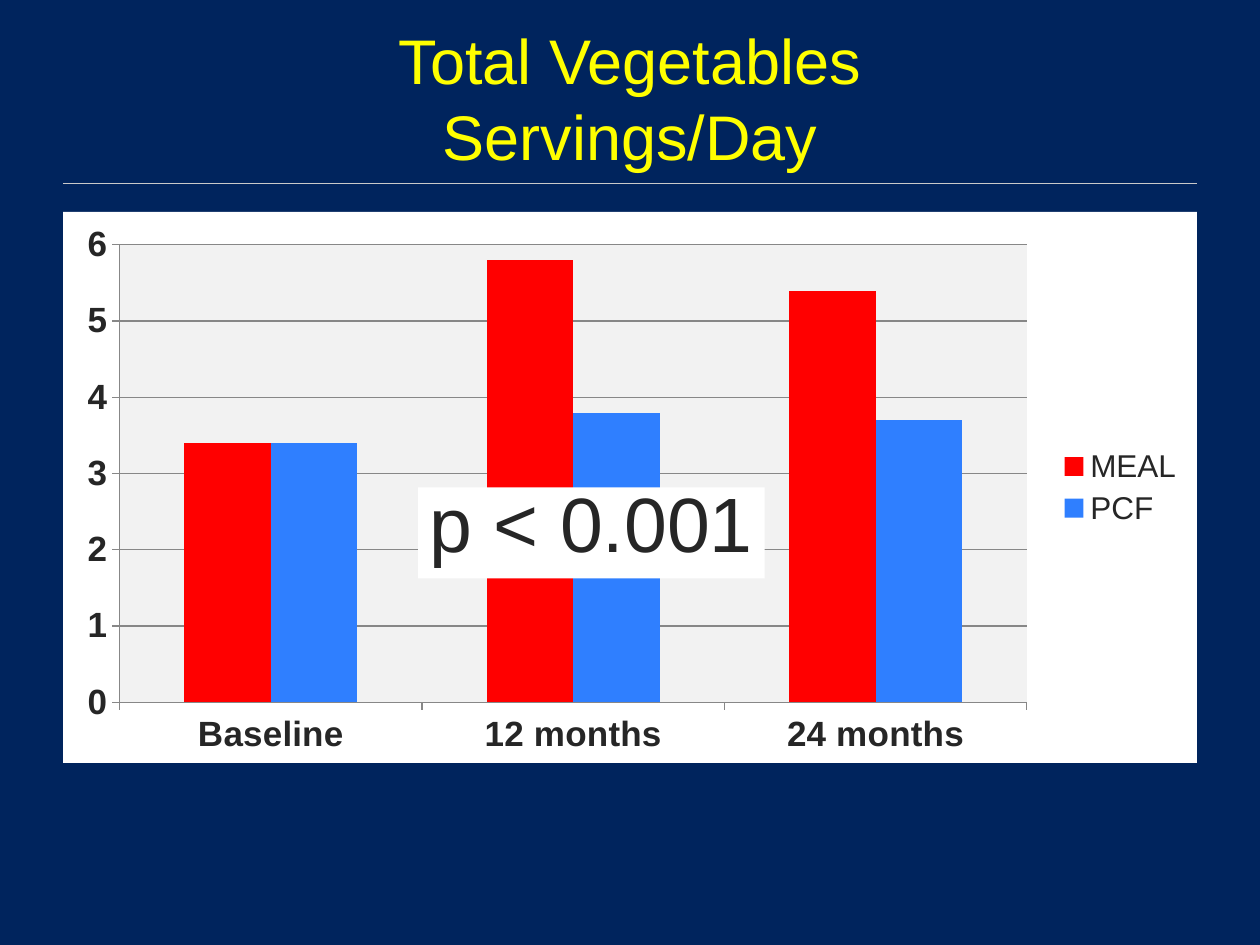
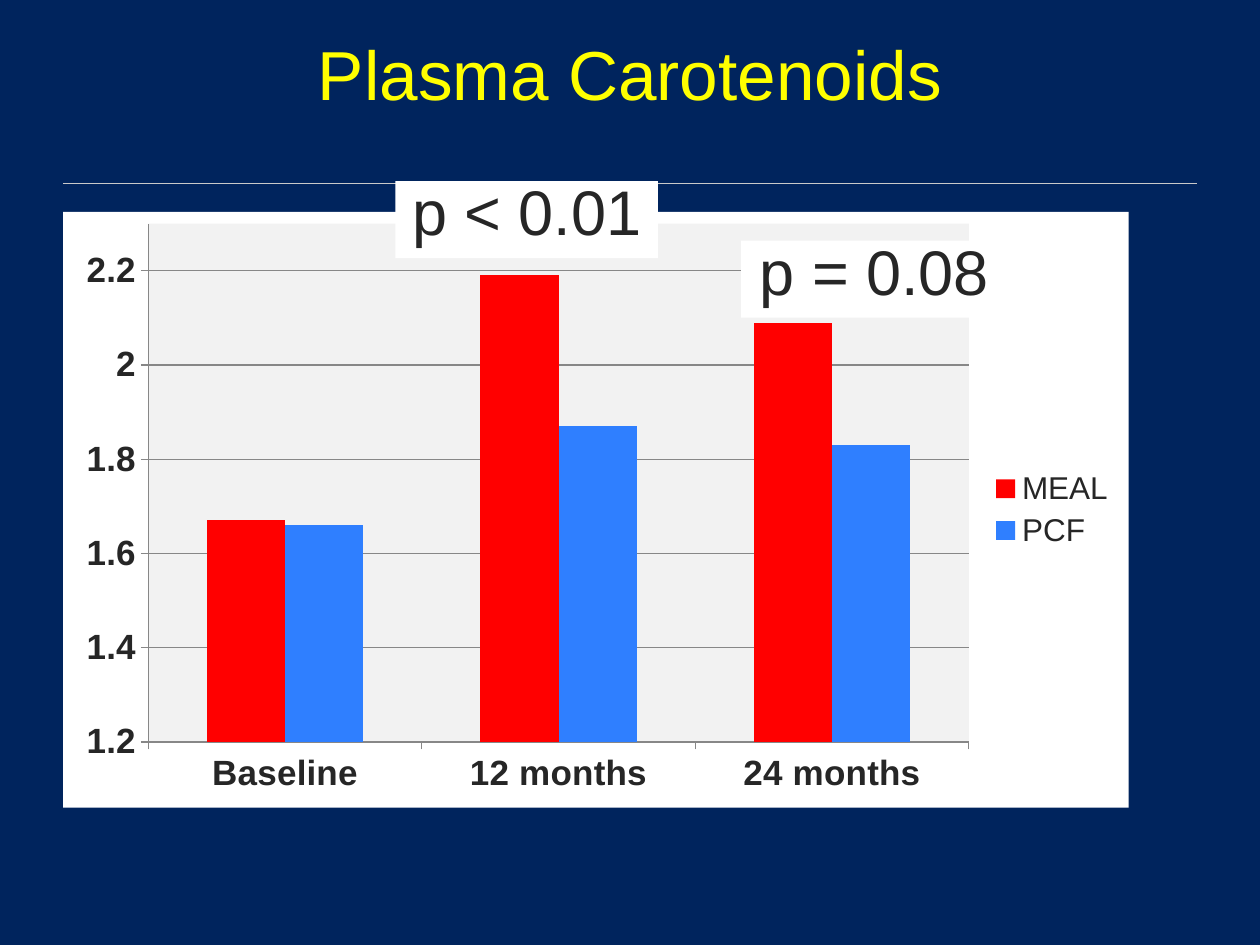
from pptx import Presentation
from pptx.chart.data import CategoryChartData as ChartData
from pptx.dml.color import RGBColor as RGB
from pptx.enum.chart import XL_CHART_TYPE as CT, XL_LEGEND_POSITION as LP, XL_TICK_MARK as TM
from pptx.enum.shapes import MSO_CONNECTOR as CONN, MSO_SHAPE as SHAPE
from pptx.enum.text import MSO_ANCHOR as ANCHOR, PP_ALIGN as ALIGN
from pptx.oxml import parse_xml
from pptx.oxml.ns import nsdecls, qn
from pptx.util import Pt

NAVY = RGB(0x00, 0x24, 0x5D)
YELLOW = RGB(0xFF, 0xFF, 0x00)
WHITE = RGB(0xFF, 0xFF, 0xFF)
INK = RGB(0x26, 0x26, 0x26)
PALE = RGB(0xF2, 0xF2, 0xF2)
RULE = RGB(0xC9, 0xC9, 0xC9)
GRID = RGB(0x87, 0x87, 0x87)
RED = RGB(0xFF, 0x00, 0x00)
BLUE = RGB(0x2F, 0x7F, 0xFF)

FONT = "Arial"
LEFT, WIDTH = 36, 648
VISITS = ("Baseline", "12 months", "24 months")
ARMS = (("MEAL", RED), ("PCF", BLUE))


def apply(obj, **values):
    """Set each named value as an attribute of the object."""
    for name, value in values.items():
        setattr(obj, name, value)


def style_font(font, size, color=INK, bold=False):
    """Give a font the deck's typeface with a size, colour and weight."""
    apply(font, name=FONT, size=Pt(size), bold=bold)
    font.color.rgb = color


def solid(color):
    """Return chart shape properties with a plain fill and no line."""
    return parse_xml(
        f'<c:spPr {nsdecls("c", "a")}><a:solidFill><a:srgbClr val="{color}"/>'
        '</a:solidFill><a:ln><a:noFill/></a:ln></c:spPr>')


def plot_layout(x, y, w, h):
    """Return a manual inner layout as fractions of the chart."""
    parts = "".join(f'<c:{k} val="{v}"/>' for k, v in (
        ("layoutTarget", "inner"), ("xMode", "edge"), ("yMode", "edge"),
        ("x", x), ("y", y), ("w", w), ("h", h)))
    return parse_xml(f'<c:layout {nsdecls("c")}><c:manualLayout>{parts}'
                     '</c:manualLayout></c:layout>')


class Deck:
    """Hold the deck style and the slide being built."""

    def __init__(self):
        """Create the presentation with its size and background."""
        self.prs = Presentation()
        apply(self.prs, slide_width=Pt(720), slide_height=Pt(540))
        fill = self.prs.slide_master.background.fill
        fill.solid()
        fill.fore_color.rgb = NAVY
        self.s = None

    def slide(self):
        """Start a blank slide with the rule under the title."""
        self.s = self.prs.slides.add_slide(self.prs.slide_layouts[6])
        y = Pt(105)
        line = self.s.shapes.add_connector(CONN.STRAIGHT, Pt(LEFT), y, Pt(LEFT + WIDTH), y)
        line.line.color.rgb = RULE
        line.line.width = Pt(0.5)
        line._element.spPr.append(parse_xml(f'<a:effectLst {nsdecls("a")}/>'))

    def text(self, sp, text, size, color, inset, anchor, spacing=None):
        """Write centred text into a shape."""
        tf = sp.text_frame
        apply(tf, word_wrap=True, vertical_anchor=anchor, margin_left=inset,
              margin_right=inset, margin_top=inset, margin_bottom=inset)
        p = tf.paragraphs[0]
        p.text = text
        apply(p, alignment=ALIGN.CENTER, line_spacing=spacing)
        for r in p.runs:
            style_font(r.font, size, color)

    def title(self, text, top, size):
        """Add a title that sits on the bottom of its box."""
        sp = self.s.shapes.add_textbox(Pt(LEFT), Pt(top), Pt(WIDTH), Pt(63.5))
        self.text(sp, text, size, YELLOW, 0, ANCHOR.BOTTOM)

    def p_value(self, text, x, y, w, h, size):
        """Add a white label with a p value."""
        sp = self.s.shapes.add_shape(SHAPE.RECTANGLE, Pt(x), Pt(y), Pt(w), Pt(h))
        sp.shadow.inherit = False
        sp.fill.solid()
        sp.fill.fore_color.rgb = WHITE
        sp.line.fill.background()
        self.text(sp, text, size, INK, Pt(3.6), ANCHOR.TOP, 0.8)

    def axis(self, axis, **scale):
        """Style an axis and set its scale."""
        apply(axis, major_tick_mark=TM.OUTSIDE, minor_tick_mark=TM.NONE, **scale)
        style_font(axis.tick_labels.font, 20, bold=True)
        axis.format.line.color.rgb = GRID

    def chart(self, values, w, h, layout, **scale):
        """Add a column chart comparing the two arms at each visit."""
        data = ChartData()
        data.categories = VISITS
        for (arm, _), vals in zip(ARMS, values):
            data.add_series(arm, vals)
        chart = self.s.shapes.add_chart(
            CT.COLUMN_CLUSTERED, Pt(LEFT), Pt(121), Pt(w), Pt(h), data).chart
        apply(chart, has_title=False, has_legend=True)
        style_font(chart.font, 18)
        apply(chart.legend, position=LP.RIGHT, include_in_layout=False)
        style_font(chart.legend.font, 18)

        self.axis(chart.category_axis)
        self.axis(chart.value_axis, has_major_gridlines=True, **scale)
        chart.value_axis.major_gridlines.format.line.color.rgb = GRID

        plot = chart.plots[0]
        apply(plot, gap_width=150, overlap=0, vary_by_categories=False)
        for series, (_, color) in zip(plot.series, ARMS):
            series.format.fill.solid()
            series.format.fill.fore_color.rgb = color

        body = chart._chartSpace.find(qn("c:chart"))
        body.addnext(solid(WHITE))
        area = body.find(qn("c:plotArea"))
        for old in area.findall(qn("c:layout")):
            area.remove(old)
        area.insert(0, plot_layout(*layout))
        area.append(solid(PALE))


def main():
    """Build both slides and save the deck."""
    deck = Deck()

    deck.slide()
    deck.chart(((3.4, 5.8, 5.4), (3.4, 3.8, 3.7)), WIDTH, 315,
               (0.05, 0.06, 0.8, 0.83),
               minimum_scale=0, maximum_scale=6, major_unit=1)
    deck.title("Total Vegetables\vServings/Day", 35.5, 36)
    deck.p_value("p < 0.001", 239, 278.5, 198, 52, 44)

    deck.slide()
    deck.chart(((1.67, 2.19, 2.09), (1.66, 1.87, 1.83)), 609, 340.5,
               (0.08, 0.02, 0.77, 0.87),
               minimum_scale=1.2, maximum_scale=2.3, major_unit=0.2)
    deck.title("Plasma Carotenoids", 2, 39.6)
    deck.p_value("p < 0.01", 226, 103.5, 150, 44, 36)
    deck.p_value("p = 0.08", 423.5, 137.5, 152.5, 44, 36)

    deck.prs.save("out.pptx")


if __name__ == "__main__":
    main()
